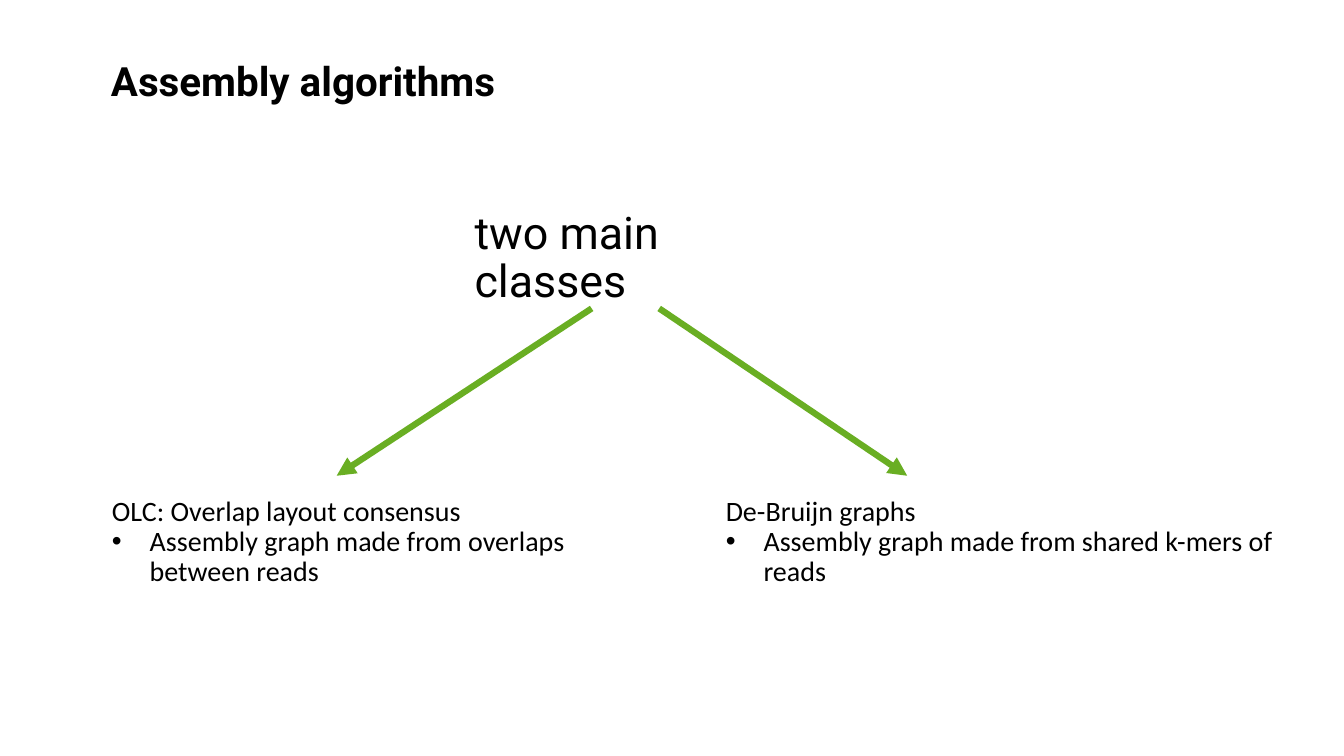
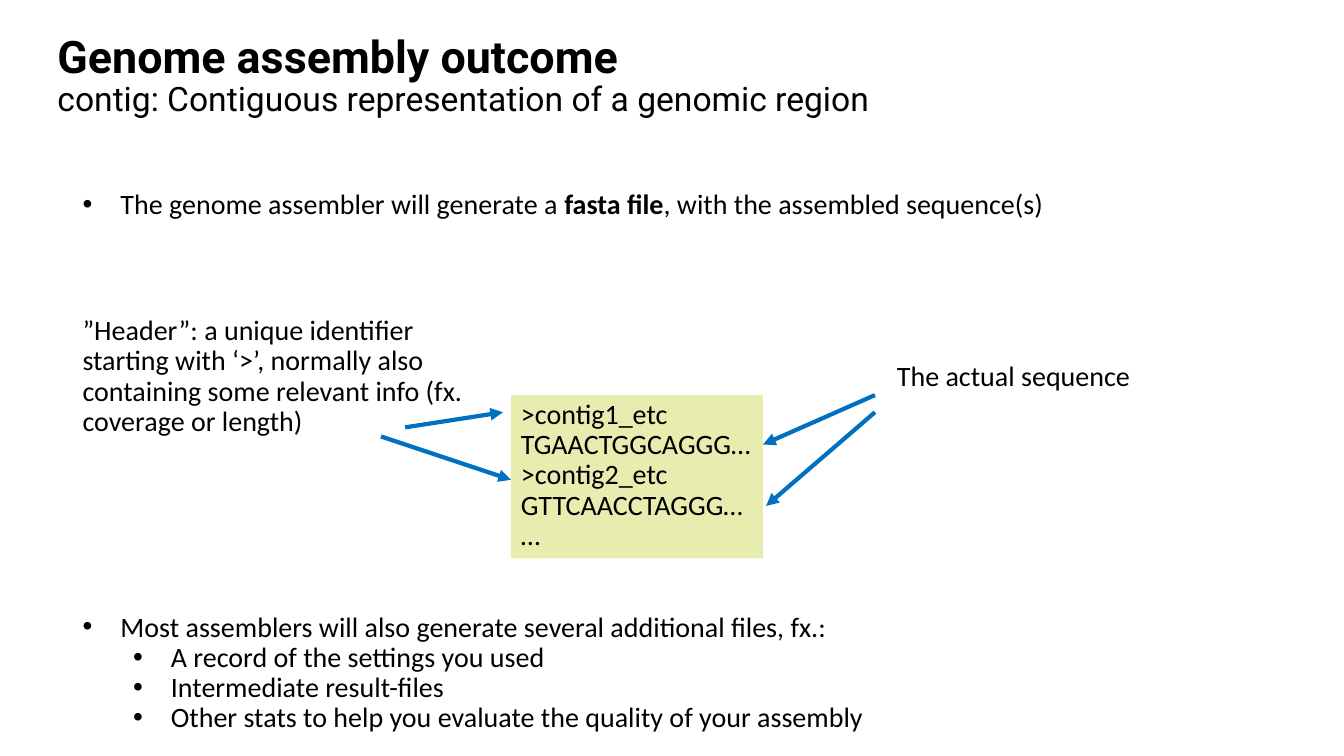
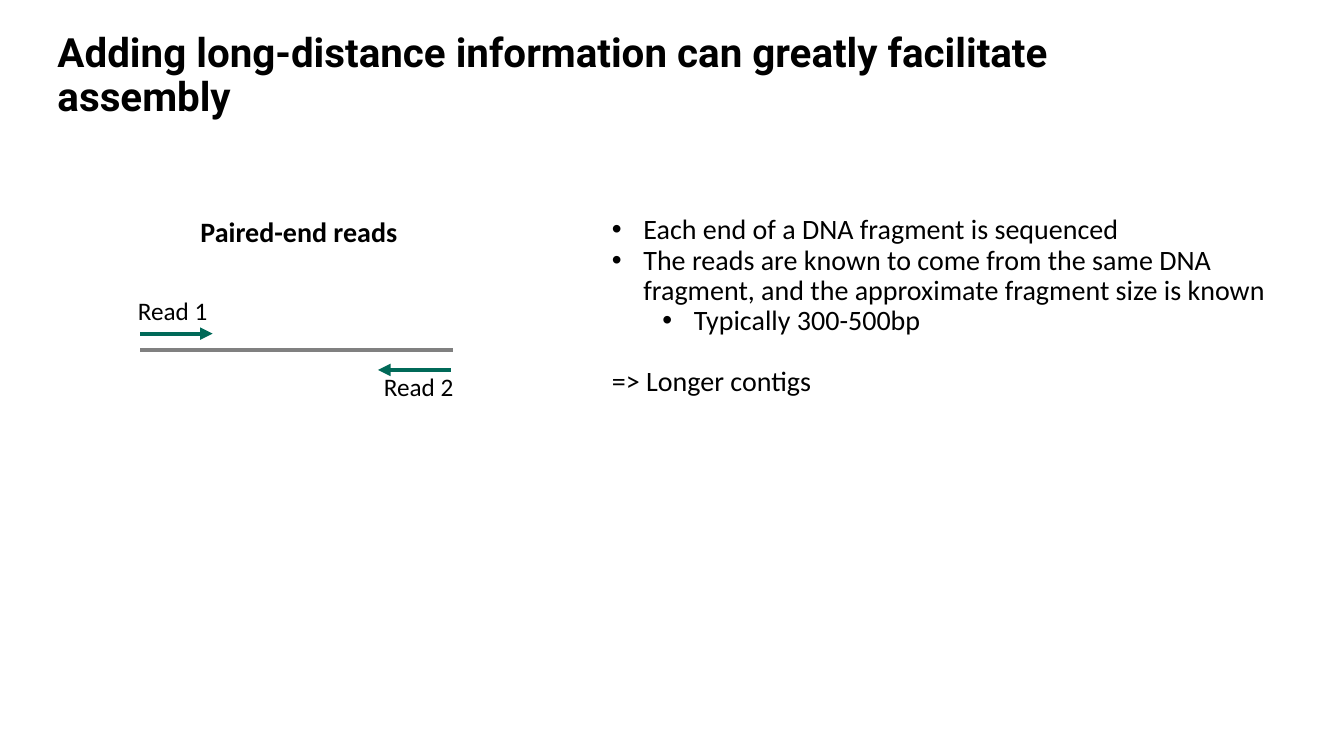
from dataclasses import dataclass
from typing import Any, Optional

from lxml import etree
from pptx import Presentation
from pptx import util as u
from pptx.dml.color import RGBColor
from pptx.enum import shapes as es, text as et
from pptx.oxml import ns

BLACK, GREEN, BLUE = "000000", "69AE23", "0070C0"
TEAL, GREY, LIME = "006958", "808080", "E6EDAF"
HEAD, BODY = "Roboto", "Calibri"
STEP = 36  # extra indent of each list level


@dataclass
class Line:
    """One paragraph; *stars* mark bold words, lvl None means no bullet."""
    words: str
    lvl: Optional[int] = None
    size: float = 20
    gap: float = 0
    font: str = BODY


@dataclass
class Box:
    x: float
    y: float
    w: float
    h: float


@dataclass
class Arrow:
    x1: float
    y1: float
    x2: float
    y2: float


def paint(tint: str) -> RGBColor:
    return RGBColor.from_string(tint)


def place(shape: Any, box: Box) -> None:
    shape.left, shape.top = u.Pt(box.x), u.Pt(box.y)
    shape.width, shape.height = u.Pt(box.w), u.Pt(box.h)


def write(shape: Any, lines: list[Line], hang: float = 27,
          wrap: bool = True, mid: bool = False) -> None:
    """Fill a shape with left-aligned paragraphs."""
    frame = shape.text_frame
    frame.auto_size = et.MSO_AUTO_SIZE.NONE
    frame.word_wrap = wrap
    frame.vertical_anchor = (et.MSO_ANCHOR.MIDDLE if mid
                             else et.MSO_ANCHOR.TOP)
    for i, line in enumerate(lines):
        para = frame.paragraphs[0] if i == 0 else frame.add_paragraph()
        props = para._p.get_or_add_pPr()
        if line.lvl is None:
            props.set("marL", "0")
            props.set("indent", "0")
            etree.SubElement(props, ns.qn("a:buNone"))
        else:
            para.level = line.lvl
            props.set("marL", str(u.Pt(hang + STEP * line.lvl)))
            props.set("indent", str(u.Pt(-hang)))
            etree.SubElement(props, ns.qn("a:buChar")).set("char", "•")
        para.alignment = et.PP_ALIGN.LEFT
        para.line_spacing = 0.9
        para.space_before = u.Pt(line.gap)
        for j, part in enumerate(line.words.split("*")):
            if part:
                run = para.add_run()
                run.text = part
                run.font.name = line.font
                run.font.size = u.Pt(line.size)
                run.font.bold = j % 2 == 1
                run.font.color.rgb = paint(BLACK)


def label(host: Any, box: Box, lines: list[Line], wrap: bool = False) -> None:
    shape = host.add_textbox(0, 0, 0, 0)
    place(shape, box)
    write(shape, lines, wrap=wrap)


def draw(host: Any, way: Arrow, tint: str, width: float,
         tip: bool = True) -> None:
    """Draw a straight line, with an arrowhead if tip is set."""
    ends = [u.Pt(v) for v in (way.x1, way.y1, way.x2, way.y2)]
    link = host.add_connector(es.MSO_CONNECTOR.STRAIGHT, *ends)
    link.line.color.rgb = paint(tint)
    link.line.width = u.Pt(width)
    if tip:
        tail = etree.SubElement(link.line._get_or_add_ln(),
                                ns.qn("a:tailEnd"))
        tail.set("type", "triangle")
    etree.SubElement(link._element.spPr, ns.qn("a:effectLst"))


def start(deck: Any, kind: int, lines: list[Line], x: float = 33.84,
          y: float = 17.28, mid: bool = True) -> Any:
    """Add a slide with its title."""
    slide = deck.slides.add_slide(deck.slide_layouts[kind])
    title = slide.shapes.title
    place(title, Box(x, y, 815, 74.88))
    for line in lines:
        line.font = HEAD
    write(title, lines, mid=mid)
    return slide


def fill(slide: Any, idx: int, box: Box, lines: list[Line],
         hang: float = 27) -> None:
    """Fill a body placeholder with a list."""
    body = slide.placeholders[idx]
    place(body, box)
    write(body, lines, hang)


def classes(deck: Any) -> None:
    slide = start(deck, 3, [Line("*Assembly algorithms*", size=28.8)],
                  72, 40.32, mid=False)
    label(slide.shapes, Box(331.92, 146.88, 256.3, 42.5),
          [Line("two main classes", size=32, font=HEAD)], wrap=True)
    for way in (Arrow(422.64, 220.32, 240.48, 339.84),
                Arrow(470.88, 220.32, 648, 339.84)):
        draw(slide.shapes, way, GREEN, 4.5)
    fill(slide, 1, Box(72.72, 351.36, 349.92, 72.72), [
        Line("OLC: Overlap layout consensus"),
        Line("Assembly graph made from overlaps between reads", 0)])
    fill(slide, 2, Box(511.2, 351.36, 420.48, 72.72), [
        Line("De-Bruijn graphs"),
        Line("Assembly graph made from shared k-mers of reads", 0)])


def outcome(deck: Any) -> None:
    slide = start(deck, 3, [
        Line("*Genome assembly outcome*", size=32),
        Line("contig: Contiguous representation of a genomic region",
             size=24)])
    host, left = slide.shapes, 51.84
    fill(slide, 1, Box(left, 132.48, 853.92, 51.12), [
        Line("The genome assembler will generate a *fasta file*, "
             "with the assembled sequence(s)", 0)])
    # Sample of the fasta file
    fasta = host.add_shape(es.MSO_SHAPE.RECTANGLE, 0, 0, 0, 0)
    place(fasta, Box(365.04, 282.24, 180, 116.64))
    fasta.shadow.inherit = False
    fasta.fill.solid()
    fasta.fill.fore_color.rgb = paint(LIME)
    fasta.line.fill.background()
    rows = (">contig1_etc", "TGAACTGGCAGGG…", ">contig2_etc",
            "GTTCAACCTAGGG…", "…")
    write(fasta, [Line(row) for row in rows], wrap=False)
    # Notes pointing at the sample
    for way in (Arrow(289.44, 305.28, 359.28, 294.48),
                Arrow(272.16, 311.76, 365.04, 342.72),
                Arrow(624.96, 282.24, 545.04, 317.52),
                Arrow(624.96, 294.48, 547.2, 361.44)):
        draw(host, way, BLUE, 3)
    label(host, Box(left, 222.48, 288.72, 94.32), [
        Line("”Header”: a unique identifier starting with ‘>’, normally "
             "also containing some relevant info (fx. coverage or length)")],
          wrap=True)
    label(host, Box(633.6, 255.6, 182.88, 28.8),
          [Line("The actual sequence")])
    fill(slide, 2, Box(left, 434.16, 614.88, 94.32), [
        Line("Most assemblers will also generate several additional files, "
             "fx.:", 0),
        Line("A record of the settings you used", 1),
        Line("Intermediate result-files", 1),
        Line("Other stats to help you evaluate the quality of your "
             "assembly", 1)])


def paired(deck: Any) -> None:
    slide = start(deck, 1, [
        Line("*Adding long-distance information can greatly facilitate "
             "assembly*", size=28.8)])
    label(slide.shapes, Box(136.08, 152.64, 156.24, 28.8),
          [Line("*Paired-end reads*")])
    fill(slide, 1, Box(429.84, 150.48, 496.8, 138.24), [
        Line("Each end of a DNA fragment is sequenced", 0),
        Line("The reads are known to come from the same DNA fragment, and "
             "the approximate fragment size is known", 0),
        Line("Typically 300-500bp", 1),
        Line("=> Longer contigs", gap=22)], hang=22.5)
    # Fragment with a read from each end
    host = slide.shapes.add_group_shape().shapes
    draw(host, Arrow(100.08, 249.84, 323.28, 249.84), GREY, 3, tip=False)
    reads = (("Read 1", Arrow(100.08, 238.32, 151.92, 238.32), 91.44, 209.52),
             ("Read 2", Arrow(321.84, 264.24, 270, 264.24), 267.12, 264.24))
    for name, way, x, y in reads:
        draw(host, way, TEAL, 3)
        label(host, Box(x, y, 64.8, 26.64), [Line(name, size=18)])


def main() -> None:
    deck = Presentation()
    deck.slide_width, deck.slide_height = u.Pt(960), u.Pt(540)
    for build in (classes, outcome, paired):
        build(deck)
    deck.save("out.pptx")


if __name__ == "__main__":
    main()
